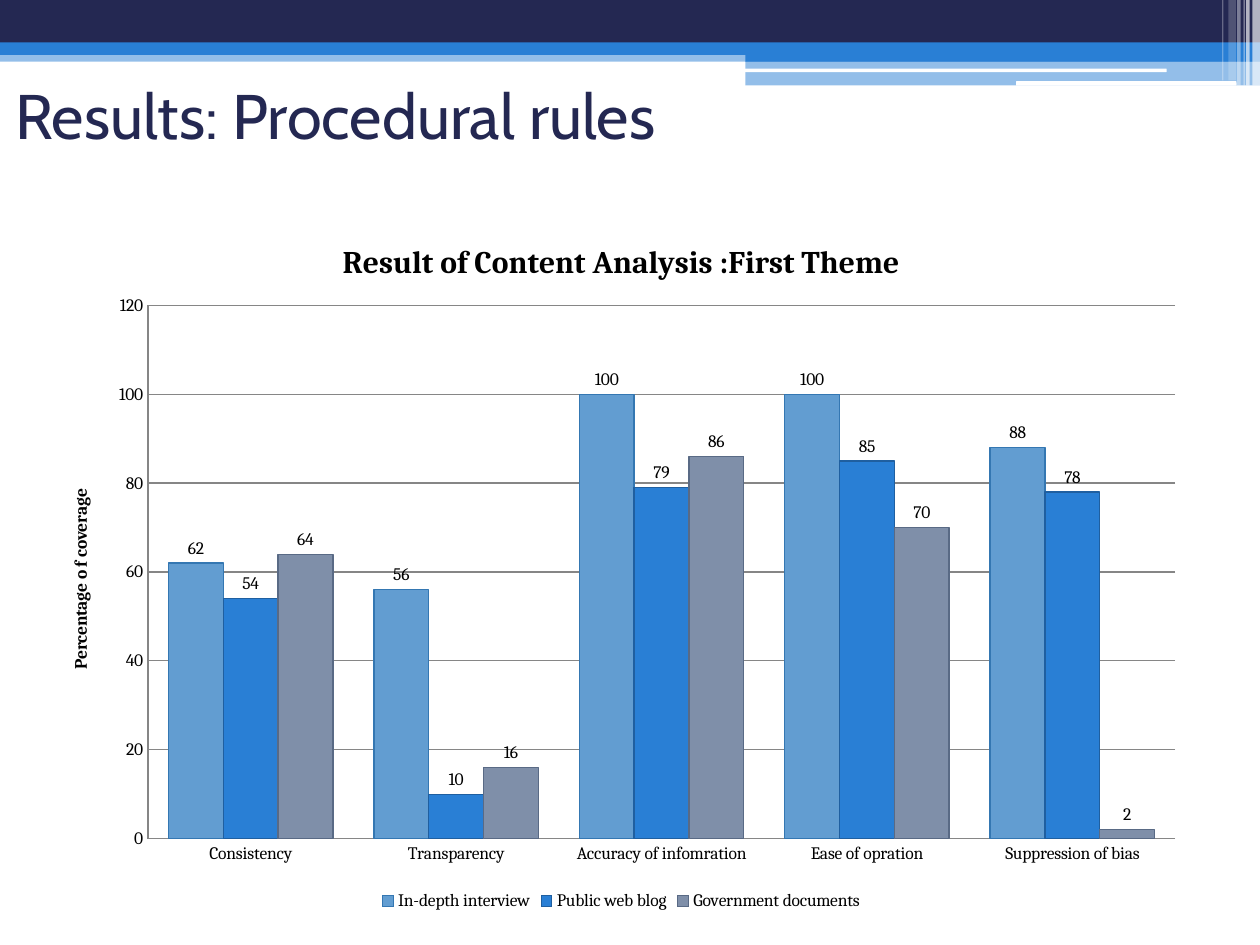
from lxml.etree import SubElement
from pptx import Presentation
from pptx.chart.data import CategoryChartData
from pptx.dml.color import RGBColor
from pptx.enum.chart import XL_CHART_TYPE as ChartType
from pptx.enum.chart import XL_LABEL_POSITION as LabelPosition
from pptx.enum.chart import XL_LEGEND_POSITION as LegendPosition
from pptx.enum.chart import XL_TICK_MARK as TickMark
from pptx.enum.shapes import MSO_SHAPE as Shape
from pptx.enum.text import MSO_ANCHOR as Anchor
from pptx.enum.text import PP_ALIGN as Align
from pptx.oxml.ns import qn
from pptx.util import Pt

NAVY = RGBColor(0x24, 0x28, 0x52)
BLUE = RGBColor(0x29, 0x7F, 0xD5)
SKY = RGBColor(0x62, 0x9D, 0xD1)
SLATE = RGBColor(0x7F, 0x8F, 0xA9)
GRAY = RGBColor(0x86, 0x86, 0x86)
BLACK = RGBColor(0, 0, 0)
WHITE = RGBColor(0xFF, 0xFF, 0xFF)

# left, top, width, height, colour, opacity in percent
BANDS = [
    (0, 28.8, 720, 6.5, BLUE, 50),
    (0, 0, 720, 24.5, NAVY, 100),
    (0, 24.2, 720, 7.2, BLUE, 100),
    (426, 28.1, 294, 7.2, BLUE, 100),
    (426, 34.9, 294, 14, BLUE, 50),
]
GROOVES = [(425.5, 39.2, 241.2, 2), (580.6, 46.4, 126, 2.6)]
# left, width, height, opacity in percent
STRIPES = [
    (715.7, 4.3, 49, 65),
    (712.1, 2, 49, 65),
    (710.6, 0.7, 49, 60),
    (707, 2, 49, 40),
    (702, 4.3, 46, 20),
    (698.4, 0.7, 46, 30),
]
CATEGORIES = ["Consistency", "Transparency", "Accuracy of infomration",
              "Ease of opration", "Suppression of bias"]
SERIES = [
    ("In-depth interview", (62, 56, 100, 100, 88), SKY),
    ("Public web blog", (54, 10, 79, 85, 78), BLUE),
    ("Government documents", (64, 16, 86, 70, 2), SLATE),
]
PLOT_AREA = {"x": 0.09, "y": 0.13, "w": 0.89, "h": 0.76}


def apply(target, formats):
    for name, value in formats.items():
        setattr(target, name, value)


class SlideBuilder:
    title_font = {"name": "Cabin", "size": Pt(36), "bold": False}
    chart_font = {"name": "Cambria", "size": Pt(10), "bold": False}
    heading_font = {"name": "Cambria", "size": Pt(18), "bold": True}

    def __init__(self, page):
        self.page = page

    def bar(self, left, top, width, height, color, opacity=100, kind=Shape.RECTANGLE):
        box = self.page.shapes.add_shape(kind, Pt(left), Pt(top), Pt(width), Pt(height))
        box.shadow.inherit = False
        box.line.fill.background()
        box.fill.solid()
        box.fill.fore_color.rgb = color
        if opacity < 100:
            color_element = box.fill._xPr.find(qn("a:solidFill"))[0]
            SubElement(color_element, qn("a:alpha"), val=str(opacity * 1000))

    def title(self, text):
        box = self.page.shapes.title
        apply(box, {"left": Pt(1.5), "top": Pt(31.7), "width": Pt(648), "height": Pt(67)})
        box.text_frame.vertical_anchor = Anchor.MIDDLE
        para = box.text_frame.paragraphs[0]
        para.alignment = Align.LEFT
        self.span(para, text, self.title_font, NAVY)

    def span(self, para, text, font, color):
        span = para.add_run()
        span.text = text
        apply(span.font, font)
        span.font.color.rgb = color

    def chart(self, heading, axis_heading):
        data = CategoryChartData()
        data.categories = CATEGORIES
        for name, values, _ in SERIES:
            data.add_series(name, values)
        chart = self.page.shapes.add_chart(
            ChartType.COLUMN_CLUSTERED, Pt(25.2), Pt(122.4), Pt(659.5), Pt(401), data).chart
        apply(chart.font, self.chart_font)
        chart.font.color.rgb = BLACK
        self.span(chart.chart_title.text_frame.paragraphs[0], heading,
                  self.heading_font, BLACK)
        chart.chart_title.include_in_layout = False
        chart.has_legend = True
        apply(chart.legend, {"position": LegendPosition.BOTTOM, "include_in_layout": False})
        self.axes(chart, axis_heading)
        self.columns(chart.plots[0])
        self.place_plot(chart)

    def axes(self, chart, heading):
        scale = chart.value_axis
        apply(scale, {"minimum_scale": 0, "maximum_scale": 120, "major_unit": 20,
                      "has_major_gridlines": True})
        self.span(scale.axis_title.text_frame.paragraphs[0], heading,
                  {**self.chart_font, "bold": True}, BLACK)
        for axis in (chart.category_axis, scale):
            apply(axis, {"major_tick_mark": TickMark.NONE, "minor_tick_mark": TickMark.NONE})
        for part in (chart.category_axis, scale, scale.major_gridlines):
            part.format.line.color.rgb = GRAY
            part.format.line.width = Pt(0.75)

    def columns(self, plot):
        apply(plot, {"gap_width": 75, "overlap": 0, "vary_by_categories": False})
        for series, (_, _, color) in zip(plot.series, SERIES):
            series.format.fill.solid()
            series.format.fill.fore_color.rgb = color
            outline = series.format.line
            outline.width = Pt(0.75)
            outline.color.rgb = color
            outline.color.brightness = -0.25
            apply(series.data_labels, {"show_value": True,
                                       "position": LabelPosition.OUTSIDE_END})

    def place_plot(self, chart):
        """Fix the inner plot area as fractions of the chart."""
        area = chart.plots[0]._element.getparent()
        layout = area.find(qn("c:layout"))
        if layout is None:
            layout = SubElement(area, qn("c:layout"))
            area.insert(0, layout)
        manual = SubElement(layout, qn("c:manualLayout"))
        settings = {"layoutTarget": "inner", "xMode": "edge", "yMode": "edge", **PLOT_AREA}
        for name, value in settings.items():
            SubElement(manual, qn("c:" + name), val=str(value))


def main():
    deck = Presentation()
    apply(deck, {"slide_width": Pt(720), "slide_height": Pt(540)})
    builder = SlideBuilder(deck.slides.add_slide(deck.slide_layouts[5]))
    for band in BANDS:
        builder.bar(*band)
    for groove in GROOVES:
        builder.bar(*groove, WHITE, kind=Shape.ROUNDED_RECTANGLE)
    for left, width, height, opacity in STRIPES:
        builder.bar(left, 0, width, height, WHITE, opacity)
    builder.title("Results: Procedural rules")
    builder.chart("Result of Content Analysis :First Theme", "Percentage o f coverage")
    deck.save("out.pptx")


if __name__ == "__main__":
    main()
